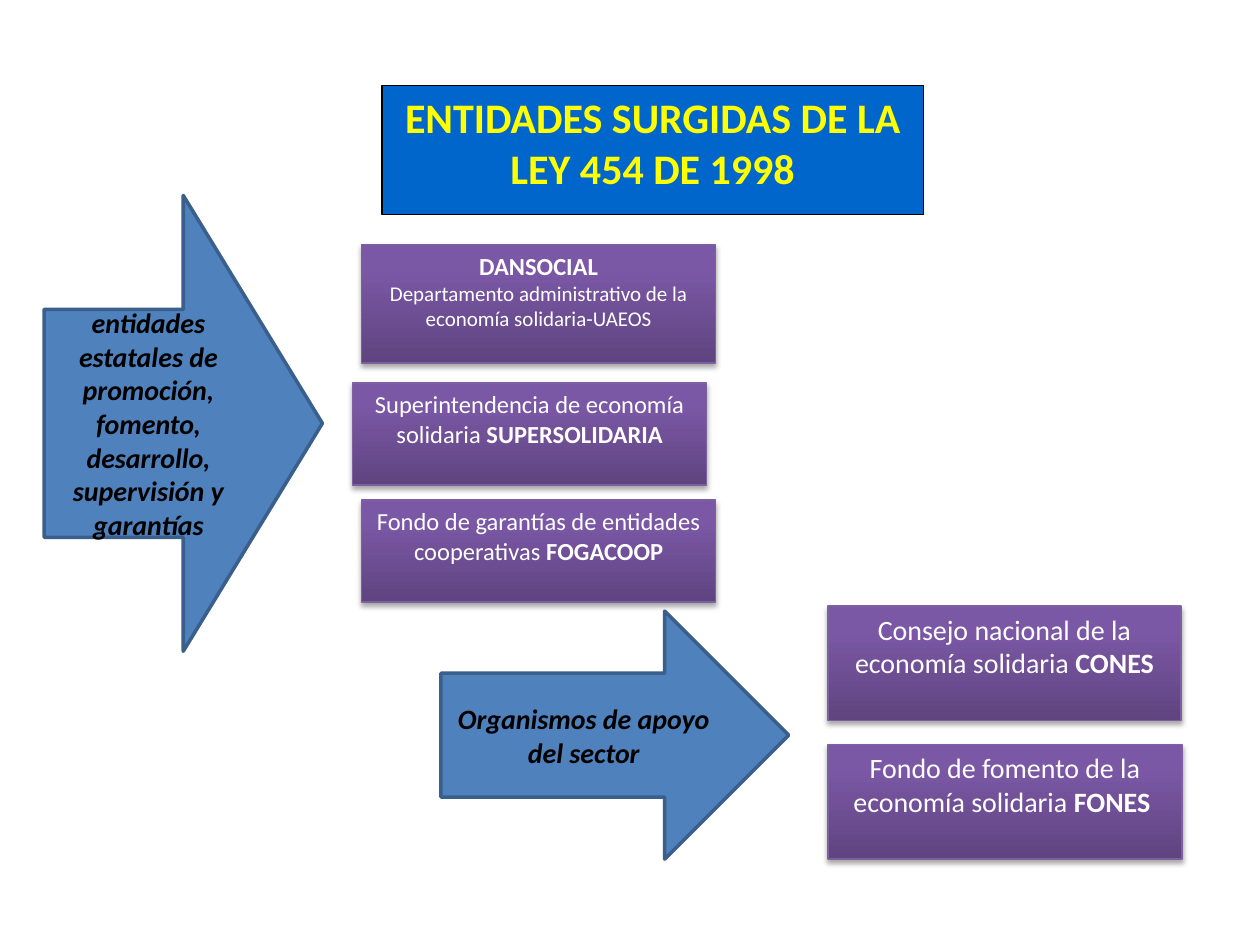
from copy import deepcopy

from lxml.etree import SubElement
from pptx import Presentation
from pptx.dml.color import RGBColor
from pptx.enum.shapes import MSO_SHAPE
from pptx.enum.text import MSO_ANCHOR, PP_ALIGN
from pptx.oxml.ns import qn
from pptx.util import Cm, Pt

COLORS = {
    "title_fill": "0066CC",
    "title_text": "FFFF00",
    "dark_purple": "5F4480",
    "purple": "7B58A6",
    "light_purple": "7C57A8",
    "box_line": "7D60A0",
    "arrow_fill": "4F81BD",
    "arrow_line": "3A5F8C",
    "white": "FFFFFF",
    "black": "000000",
}
GRADIENT = [(0, "dark_purple"), (0.8, "purple"), (1, "light_purple")]

# Left, top, width and height in cm; each paragraph is a list of (text, size, bold)
ENTITIES = [
    ((7.29, 4.93, 7.14, 2.39), [
        [("DANSOCIAL", 14, True)],
        [("Departamento administrativo de la economía solidaria-UAEOS", 12, False)],
    ]),
    ((7.11, 7.72, 7.14, 2.06), [
        [("Superintendencia de economía solidaria ", 14, False), ("SUPERSOLIDARIA", 14, True)],
    ]),
    ((7.29, 10.08, 7.14, 2.06), [
        [("Fondo de garantías de entidades cooperativas ", 14, False), ("FOGACOOP", 14, True)],
    ]),
    ((16.69, 12.22, 7.12, 2.31), [
        [("Consejo nacional de la economía solidaria ", 16, False), ("CONES", 16, True)],
    ]),
    ((16.69, 15.01, 7.14, 2.31), [
        [("Fondo de fomento de la economía solidaria ", 16, False), ("FONES ", 16, True)],
    ]),
]
ARROWS = [
    ((0.89, 3.94, 5.61, 9.19),
     "entidades estatales de promoción, fomento, desarrollo, supervisión y garantías"),
    ((8.89, 12.32, 7.01, 5), "Organismos de apoyo del sector"),
]


def color(name):
    return RGBColor.from_string(COLORS[name])


def add_text(shape, paragraphs, color_name, anchor, italic=False):
    frame = shape.text_frame
    frame.word_wrap = True
    frame.vertical_anchor = anchor
    for index, spans in enumerate(paragraphs):
        para = frame.add_paragraph() if index else frame.paragraphs[0]
        para.alignment = PP_ALIGN.CENTER
        for text, size, bold in spans:
            span = para.add_run()
            span.text = text
            formats = {"name": "Calibri", "size": Pt(size), "bold": bold, "italic": italic}
            for attribute, value in formats.items():
                setattr(span.font, attribute, value)
            span.font.color.rgb = color(color_name)


def add_block(page, kind, place, line_name, line_width, fill_name=None):
    shape = page.shapes.add_shape(kind, *map(Cm, place))
    shape.shadow.inherit = False
    shape.line.color.rgb = color(line_name)
    shape.line.width = Pt(line_width)
    if fill_name:
        shape.fill.solid()
        shape.fill.fore_color.rgb = color(fill_name)
    return shape


def set_gradient(shape):
    shape.fill.gradient()
    shape.fill.gradient_angle = 90
    stop_list = shape.element.spPr.find(qn("a:gradFill")).find(qn("a:gsLst"))
    stop_list.append(deepcopy(stop_list[0]))
    for stop, (position, name) in zip(shape.fill.gradient_stops, GRADIENT):
        stop.position = position
        stop.color.rgb = color(name)


def set_shadow(shape):
    effects = shape.element.spPr.find(qn("a:effectLst"))
    shadow = SubElement(effects, qn("a:outerShdw"), blurRad=str(Pt(3.1)),
                        dist=str(Pt(1.8)), dir="5400000", rotWithShape="0")
    shade = SubElement(shadow, qn("a:srgbClr"), val=COLORS["black"])
    SubElement(shade, qn("a:alpha"), val="35000")


def add_title(page, place, text):
    box = add_block(page, MSO_SHAPE.RECTANGLE, place, "black", 0.75, "title_fill")
    add_text(box, [[(text, 24, True)]], "title_text", MSO_ANCHOR.TOP)


def add_entity(page, place, paragraphs):
    box = add_block(page, MSO_SHAPE.RECTANGLE, place, "box_line", 0.75)
    set_gradient(box)
    set_shadow(box)
    add_text(box, paragraphs, "white", MSO_ANCHOR.TOP)


def add_arrow(page, place, text):
    arrow = add_block(page, MSO_SHAPE.RIGHT_ARROW, place, "arrow_line", 2, "arrow_fill")
    add_text(arrow, [[(text, 16, True)]], "black", MSO_ANCHOR.MIDDLE, italic=True)


def main():
    deck = Presentation()
    deck.slide_width, deck.slide_height = Cm(25.4), Cm(19.05)
    page = deck.slides.add_slide(deck.slide_layouts[6])

    # Heading
    add_title(page, (7.7, 1.73, 10.92, 2.59), "ENTIDADES SURGIDAS DE LA LEY 454 DE 1998")

    # Entities created by the law
    for place, paragraphs in ENTITIES:
        add_entity(page, place, paragraphs)

    # Arrows naming each group
    for place, text in ARROWS:
        add_arrow(page, place, text)

    deck.save("out.pptx")


if __name__ == "__main__":
    main()
